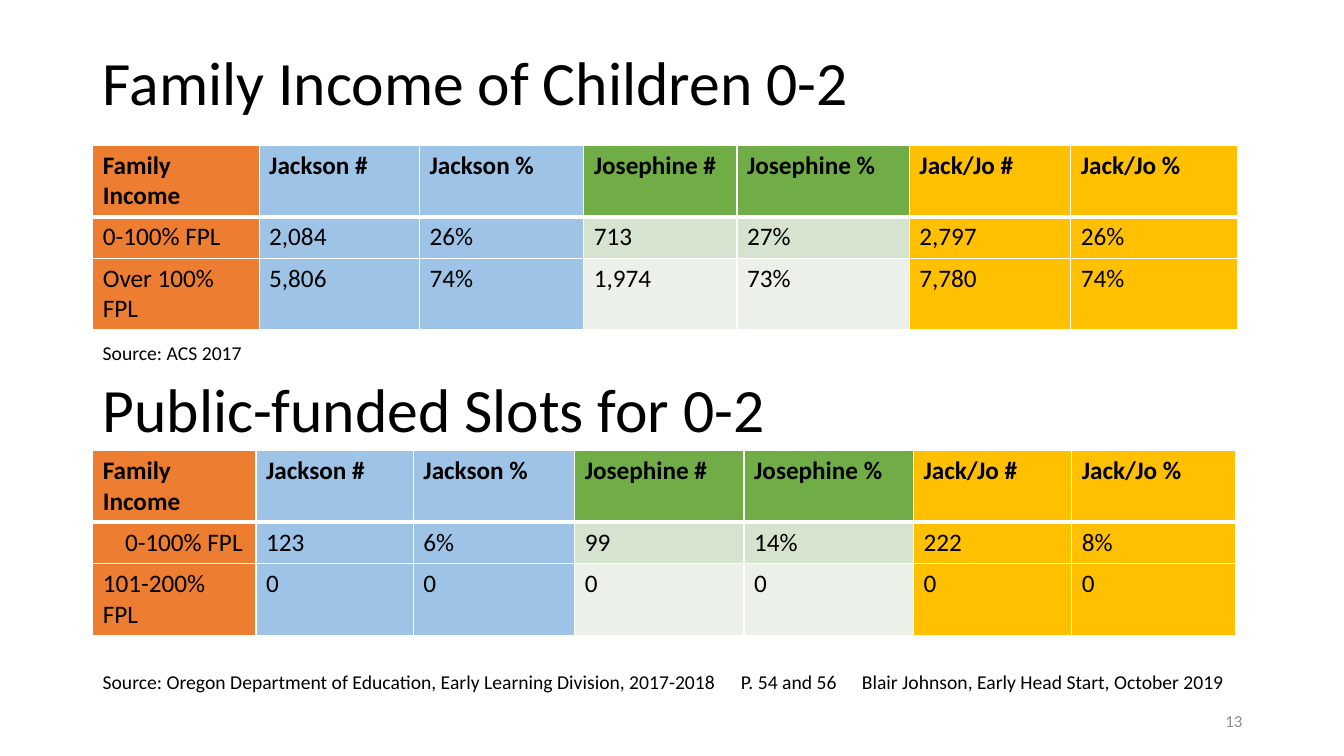
from pptx import Presentation
from pptx.dml.color import RGBColor
from pptx.enum import text
from pptx.oxml import parse_xml
from pptx.oxml.ns import nsdecls
from pptx.util import Inches, Pt

BLACK = RGBColor(0x00, 0x00, 0x00)
GRAY = RGBColor(0x8C, 0x8C, 0x8C)
WHITE = RGBColor(0xFF, 0xFF, 0xFF)
ORANGE = RGBColor(0xED, 0x7D, 0x31)
BLUE = RGBColor(0x9D, 0xC3, 0xE6)
GREEN = RGBColor(0x70, 0xAD, 0x47)
GREEN_MID = RGBColor(0xD5, 0xE3, 0xCF)
GREEN_PALE = RGBColor(0xEB, 0xF1, 0xE9)
GOLD = RGBColor(0xFF, 0xC0, 0x00)
FONT = "Calibri"
LEFT = 0.92
INDENT = 0.22

TITLE = "Family Income of Children 0-2"
HEADER = ["Family Income", "Jackson #", "Jackson %", "Josephine #",
          "Josephine %", "Jack/Jo #", "Jack/Jo %"]
INCOME = [
    HEADER,
    ["0-100% FPL", "2,084", "26%", "713", "27%", "2,797", "26%"],
    ["Over 100% FPL", "5,806", "74%", "1,974", "73%", "7,780", "74%"],
]
SLOTS = [
    HEADER,
    ["0-100% FPL", "123", "6%", "99", "14%", "222", "8%"],
    ["101-200% FPL", "0", "0", "0", "0", "0", "0"],
]
TABLES = [
    (INCOME, 1.44, [1.65, 1.59, 1.63, 1.52, 1.71, 1.6, 1.66]),
    (SLOTS, 4.47, [1.62, 1.56, 1.6, 1.68, 1.68, 1.57, 1.63]),
]
ROW_HEIGHTS = [0.7, 0.41, 0.7]
ROW_GREENS = [GREEN, GREEN_MID, GREEN_PALE]
LABELS = [
    ("Public-funded Slots for 0-2", LEFT, 3.63, 9.13, 0.84, 44),
    ("Source: ACS 2017", LEFT, 3.33, 5.18, 0.34, 14),
    ("Source: Oregon Department of Education, Early Learning Division, 2017-2018",
     LEFT, 6.6, 6.33, 0.34, 14),
    ("P. 54 and 56\tBlair Johnson, Early Head Start, October 2019",
     7.25, 6.6, 5.03, 0.34, 14),
]
PAGE = ("13", 9.42, 6.95, 3, 0.4, 12)
TAB_STOP = 1.2


def add_run(p, words, size, color=BLACK, bold=False):
    r = p.add_run()
    r.text = words
    r.font.name = FONT
    r.font.size = Pt(size)
    r.font.bold = bold
    r.font.color.rgb = color


def add_label(s, words, left, top, width, height, size, color=BLACK):
    sp = s.shapes.add_textbox(*map(Inches, (left, top, width, height)))
    tf = sp.text_frame
    tf.word_wrap = True
    p = tf.paragraphs[0]
    if "\t" in words:
        p._p.get_or_add_pPr().append(parse_xml(
            f'<a:tabLst {nsdecls("a")}><a:tab pos="{Inches(TAB_STOP)}" algn="l"/></a:tabLst>'))
    add_run(p, words, size, color)
    return tf


def add_borders(cell, row):
    widths = {"lnL": 1, "lnR": 1, "lnT": 3 if row == 1 else 1, "lnB": 3 if row == 0 else 1}
    for side, width in widths.items():
        cell._tc.get_or_add_tcPr().append(parse_xml(
            f'<a:{side} {nsdecls("a")} w="{Pt(width)}"><a:solidFill>'
            f'<a:srgbClr val="{WHITE}"/></a:solidFill></a:{side}>'))


def add_grid(s, rows, top, widths):
    frame = s.shapes.add_table(len(rows), len(widths), Inches(LEFT), Inches(top),
                               Inches(sum(widths)), Inches(sum(ROW_HEIGHTS)))
    table = frame.table
    for column, width in zip(table.columns, widths):
        column.width = Inches(width)
    for i, values in enumerate(rows):
        table.rows[i].height = Inches(ROW_HEIGHTS[i])
        fills = [ORANGE, BLUE, BLUE, ROW_GREENS[i], ROW_GREENS[i], GOLD, GOLD]
        for j, (value, fill) in enumerate(zip(values, fills)):
            cell = table.cell(i, j)
            add_borders(cell, i)
            cell.fill.solid()
            cell.fill.fore_color.rgb = fill
            add_run(cell.text_frame.paragraphs[0], value, 18, bold=i == 0)
    return table


prs = Presentation()
prs.slide_width, prs.slide_height = Inches(13.33), Inches(7.5)
s = prs.slides.add_slide(prs.slide_layouts[5])

title = s.shapes.title
title.left, title.top, title.width, title.height = map(Inches, (LEFT, 0.4, 11.5, 0.9))
tf = title.text_frame
tf.auto_size = text.MSO_AUTO_SIZE.NONE
tf.vertical_anchor = text.MSO_ANCHOR.MIDDLE
p = tf.paragraphs[0]
p.alignment = text.PP_ALIGN.LEFT
p.line_spacing = 0.9
add_run(p, TITLE, 44)

income, slots = [add_grid(s, *spec_row) for spec_row in TABLES]
slots.cell(1, 0).margin_left = Inches(0.1 + INDENT)

for label in LABELS:
    add_label(s, *label)

tf = add_label(s, *PAGE, color=GRAY)
tf.vertical_anchor = text.MSO_ANCHOR.MIDDLE
tf.paragraphs[0].alignment = text.PP_ALIGN.RIGHT

prs.save("out.pptx")
